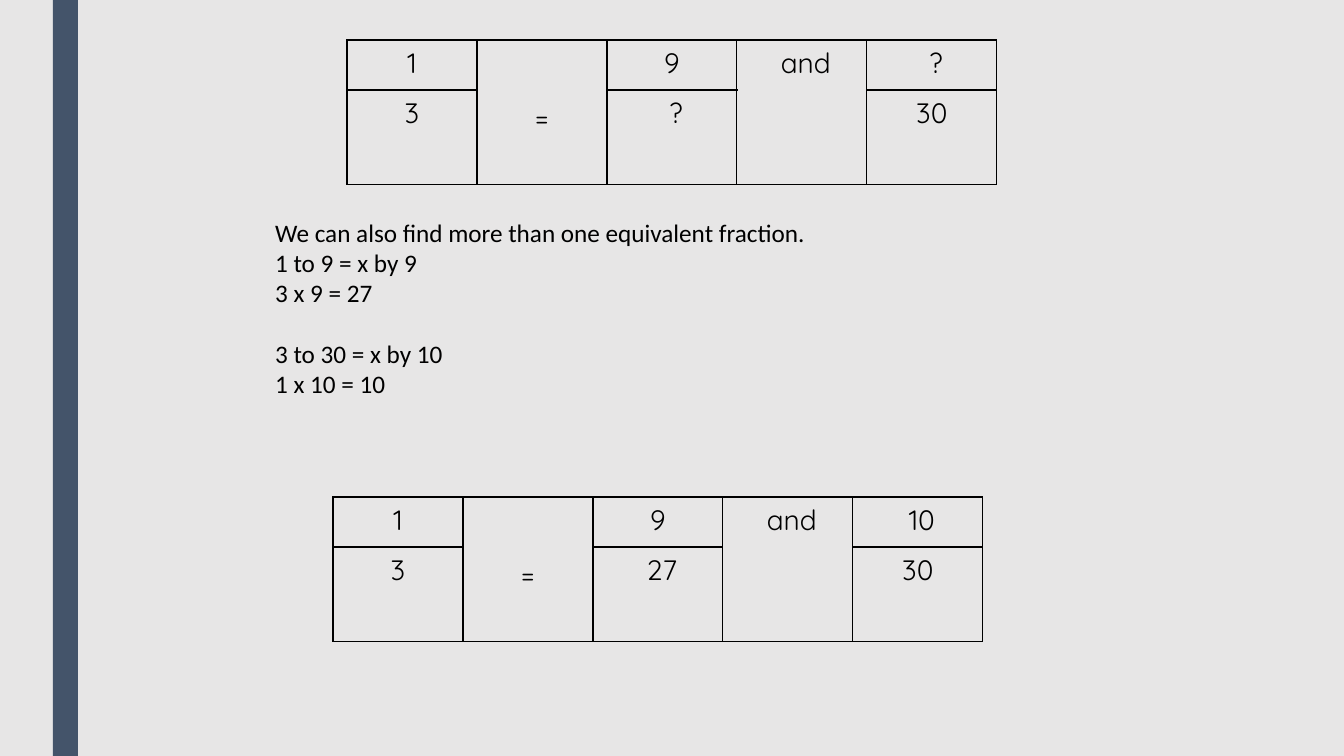
"""Build a slide on finding more than one equivalent fraction."""
import lxml.etree
import pptx
import pptx.dml.color
import pptx.enum.shapes
import pptx.enum.text
import pptx.oxml.ns
import pptx.util

THEME = {
    "background": pptx.dml.color.RGBColor.from_string("E7E6E6"),
    "bar": pptx.dml.color.RGBColor.from_string("44546A"),
    "text": pptx.dml.color.RGBColor.from_string("000000"),
    "border": "000000",
    "border_width": 1,
    "body_font": "Calibri",
    "body_size": 18,
    "table_font": "Quicksand",
    "table_size": 20,
}
INSET = 7
SPACE_WIDTH = 8
EQUALS_DROP = 54


def px(length):
    return pptx.util.Emu(round(length * 914400 / 100.8))


def add_run(paragraph, text, font, size):
    run = paragraph.add_run()
    run.text = text
    run.font.name = font
    run.font.size = pptx.util.Pt(size)
    run.font.color.rgb = THEME["text"]


presentation = pptx.Presentation()
presentation.slide_width = px(1344)
presentation.slide_height = px(756)
slide = presentation.slides.add_slide(presentation.slide_layouts[1])
slide.background.fill.solid()
slide.background.fill.fore_color.rgb = THEME["background"]
title = slide.shapes.title.element
title.getparent().remove(title)

bar = slide.shapes.add_shape(pptx.enum.shapes.MSO_SHAPE.RECTANGLE, px(53), 0, px(25), px(756))
bar.shadow.inherit = False
bar.fill.solid()
bar.fill.fore_color.rgb = THEME["bar"]
bar.line.fill.background()

body = slide.placeholders[1]
body.left, body.top, body.width, body.height = px(265), px(212), px(978), px(194)
frame = body.text_frame
frame.word_wrap = True
frame.auto_size = pptx.enum.text.MSO_AUTO_SIZE.NONE
frame.vertical_anchor = pptx.enum.text.MSO_ANCHOR.TOP
working = [
    ("We can also find more than one equivalent fraction.", 0),
    ("1 to 9 = x by 9", 0),
    ("3 x 9 = 27", 0),
    ("3 to 30 = x by 10", 22),
    ("1 x 10 = 10", 0),
]
for index, (line, gap) in enumerate(working):
    paragraph = frame.add_paragraph() if index else frame.paragraphs[0]
    paragraph.alignment = pptx.enum.text.PP_ALIGN.LEFT
    paragraph.line_spacing = 1.0
    paragraph.space_before = pptx.util.Pt(gap)
    paragraph.space_after = pptx.util.Pt(0)
    add_run(paragraph, line, THEME["body_font"], THEME["body_size"])
    properties = paragraph._p.get_or_add_pPr()
    properties.set("marL", "0")
    properties.set("indent", "0")
    lxml.etree.SubElement(properties, pptx.oxml.ns.qn("a:buNone"))

fraction_tables = [
    (347, 40, [["1", "=", "9", "and", "?"], ["3", "", "?", "", "30"]]),
    (333, 497, [["1", "=", "9", "and", "10"], ["3", "", "27", "", "30"]]),
]
indented = {(0, 3), (0, 4), (1, 2)}
for left, top, rows in fraction_tables:
    table = slide.shapes.add_table(2, 5, px(left), px(top), px(650), px(143)).table
    table.first_row = False
    table.horz_banding = False
    for column in table.columns:
        column.width = px(130)
    for row, height in zip(table.rows, (50, 93)):
        row.height = px(height)
    for joined in (1, 3):
        table.cell(0, joined).merge(table.cell(1, joined))
    for row_index, row in enumerate(rows):
        for column_index, text in enumerate(row):
            cell = table.cell(row_index, column_index)
            indent = SPACE_WIDTH if (row_index, column_index) in indented else 0
            cell.margin_left = px(INSET + indent)
            cell.margin_right = px(INSET)
            cell.margin_top = px(EQUALS_DROP if text == "=" else 0)
            cell.margin_bottom = 0
            properties = cell._tc.get_or_add_tcPr()
            for side in ("lnL", "lnR", "lnT", "lnB"):
                border = lxml.etree.SubElement(properties, pptx.oxml.ns.qn("a:" + side))
                border.set("w", str(pptx.util.Pt(THEME["border_width"])))
                fill = lxml.etree.SubElement(border, pptx.oxml.ns.qn("a:solidFill"))
                color = lxml.etree.SubElement(fill, pptx.oxml.ns.qn("a:srgbClr"))
                color.set("val", THEME["border"])
            cell.fill.background()
            if text:
                paragraph = cell.text_frame.paragraphs[0]
                paragraph.alignment = pptx.enum.text.PP_ALIGN.CENTER
                paragraph.line_spacing = 1.15
                paragraph.space_after = pptx.util.Pt(10)
                add_run(paragraph, text, THEME["table_font"], THEME["table_size"])

presentation.save("out.pptx")
